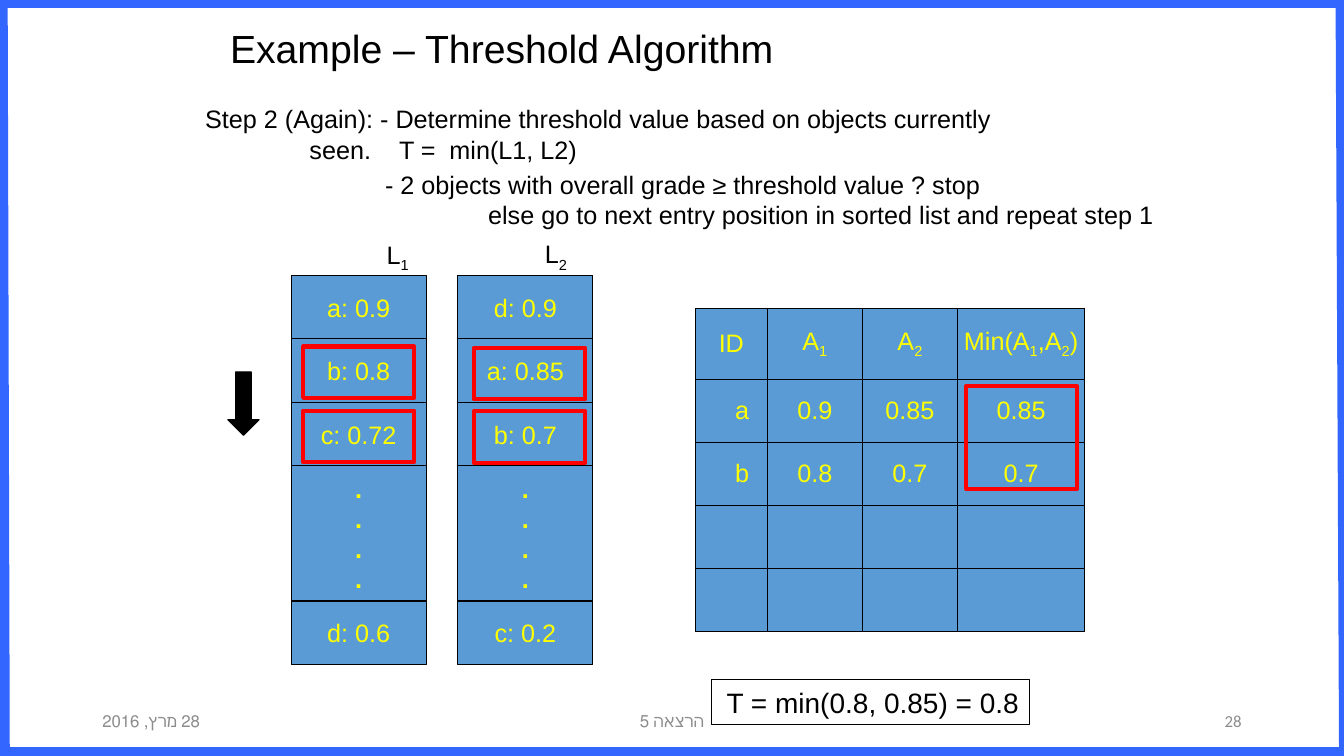
from lxml import etree
from pptx import Presentation
from pptx.dml.color import RGBColor
from pptx.enum.shapes import MSO_CONNECTOR, MSO_SHAPE
from pptx.enum.text import MSO_ANCHOR, MSO_AUTO_SIZE, PP_ALIGN
from pptx.oxml import parse_xml
from pptx.oxml.ns import nsdecls, qn
from pptx.util import Pt

LEFT, CENTER, RIGHT = PP_ALIGN.LEFT, PP_ALIGN.CENTER, PP_ALIGN.RIGHT
TOP, MIDDLE = MSO_ANCHOR.TOP, MSO_ANCHOR.MIDDLE
RECTANGLE, DOWN_ARROW = MSO_SHAPE.RECTANGLE, MSO_SHAPE.DOWN_ARROW
STRAIGHT = MSO_CONNECTOR.STRAIGHT
NO_AUTOFIT = MSO_AUTO_SIZE.NONE

BLACK = RGBColor(0x00, 0x00, 0x00)
YELLOW = RGBColor(0xFF, 0xFF, 0x00)
RED = RGBColor(0xFF, 0x00, 0x00)
CELL_BLUE = RGBColor(0x5B, 0x9B, 0xD5)
FRAME_BLUE = RGBColor(0x33, 0x66, 0xFF)
GREY = RGBColor(0x8C, 0x8C, 0x8C)


def write(frame, text, size=18, color=BLACK, align=LEFT, anchor=TOP,
          font="Arial", bold=False, wrap=True, rtl=False):
    """Fill a text frame; the character after an underscore is a subscript."""
    frame.word_wrap = wrap
    frame.vertical_anchor = anchor
    for row, line in enumerate(text.split("\n")):
        para = frame.paragraphs[0] if row == 0 else frame.add_paragraph()
        para.alignment = align
        if rtl:
            para._p.get_or_add_pPr().set("rtl", "1")
        head, *tails = line.split("_")
        pieces = [(head, False)]
        for tail in tails:
            pieces += [(tail[0], True), (tail[1:], False)]
        for piece, is_subscript in pieces:
            if not piece:
                continue
            span = para.add_run()
            span.text = piece
            span.font.size = Pt(size)
            span.font.name = font
            span.font.bold = bold
            span.font.color.rgb = color
            if is_subscript:
                span._r.get_or_add_rPr().set("baseline", "-25000")


def add_box(page, left, top, width, height, kind=RECTANGLE, fill=None,
            line=BLACK, weight=0.75):
    box = page.shapes.add_shape(kind, Pt(left), Pt(top), Pt(width), Pt(height))
    box.shadow.inherit = False
    if fill is None:
        box.fill.background()
    else:
        box.fill.solid()
        box.fill.fore_color.rgb = fill
    box.line.color.rgb = line
    box.line.width = Pt(weight)
    return box


deck = Presentation()
deck.slide_width, deck.slide_height = Pt(960), Pt(540)
page = deck.slides.add_slide(deck.slide_layouts[5])

# Frame around the page
for x1, y1, x2, y2 in [(960, 2, 0, 2), (957.5, 0, 960, 540),
                       (2, 0, 3.5, 540), (958, 537, 2, 537)]:
    edge = page.shapes.add_connector(STRAIGHT, Pt(x1), Pt(y1), Pt(x2), Pt(y2))
    edge.line.color.rgb = FRAME_BLUE
    edge.line.width = Pt(7)
    etree.SubElement(edge._element.spPr, qn("a:effectLst"))

# Title
title = page.shapes.title
title.left, title.top, title.width, title.height = Pt(139.5), Pt(14), Pt(420), Pt(41)
title.text_frame.auto_size = NO_AUTOFIT
write(title.text_frame, "Example – Threshold Algorithm", size=28, align=RIGHT, anchor=MIDDLE)

# Sorted lists
LIST_WIDTH, ENTRY_HEIGHT, DOTS_HEIGHT = 96.5, 45.4, 96.5
sorted_lists = [
    (208, ["a: 0.9", "b: 0.8", "c: 0.72", ".\n.\n.\n.", "d: 0.6"]),
    (327, ["d: 0.9", "a: 0.85", "b: 0.7", ".\n.\n.\n.", "c: 0.2"]),
]
for list_left, entries in sorted_lists:
    top = 196.6
    for entry in entries:
        is_dots = entry.startswith(".")
        height = DOTS_HEIGHT if is_dots else ENTRY_HEIGHT
        box = add_box(page, list_left, top, LIST_WIDTH, height, fill=CELL_BLUE)
        write(box.text_frame, entry, color=YELLOW, align=CENTER, anchor=MIDDLE,
              bold=is_dots, wrap=False)
        top += height

# Table of overall grades
grades = [
    ["ID", "A_1", "A_2", "Min(A_1,A_2)"],
    ["a", "0.9", "0.85", "0.85"],
    ["b", "0.8", "0.7", "0.7"],
    [""] * 4,
    [""] * 4,
]
column_widths = [51.2, 68, 68, 90.8]
row_heights = [50.8, 45.1, 45.1, 45.1, 45.1]
table = page.shapes.add_table(5, 4, Pt(496.8), Pt(220), Pt(sum(column_widths)),
                              Pt(sum(row_heights))).table
table.first_row = table.horz_banding = False
for column, width in zip(table.columns, column_widths):
    column.width = Pt(width)
for row, height in zip(table.rows, row_heights):
    row.height = Pt(height)
for r, values in enumerate(grades):
    for c, value in enumerate(values):
        cell = table.cell(r, c)
        for side in ("lnL", "lnR", "lnT", "lnB"):
            cell._tc.get_or_add_tcPr().append(parse_xml(
                f'<a:{side} {nsdecls("a")} w="9525"><a:solidFill>'
                f'<a:srgbClr val="{BLACK}"/></a:solidFill></a:{side}>'))
        cell.fill.solid()
        cell.fill.fore_color.rgb = CELL_BLUE
        is_object = c == 0 and r > 0
        cell.margin_left = 0
        cell.margin_right = Pt(13 if is_object else 0)
        cell.vertical_anchor = MIDDLE
        write(cell.text_frame, value, color=YELLOW, anchor=MIDDLE,
              align=RIGHT if is_object else CENTER)

# Highlighted entries and grades
for left, top, height in [(216.5, 247.5, 36.7), (338.4, 248.5, 36.7), (338.4, 293.8, 36.7),
                          (216.5, 293.3, 36.7), (690, 275.8, 73.4)]:
    add_box(page, left, top, 79.5, height, line=RED, weight=3)

add_box(page, 162.7, 265.6, 22.4, 45.4, kind=DOWN_ARROW, fill=BLACK)

threshold = add_box(page, 508.3, 485.5, 226.8, 32)
write(threshold.text_frame, "T = min(0.8, 0.85) = 0.8", size=20, align=RIGHT, anchor=MIDDLE)

# Step text, list labels and footers
footer = {"size": 12, "color": GREY, "font": "Calibri", "anchor": MIDDLE}
labels = [
    (139.5, 70.5, 629, 50.5,
     "Step 2 (Again): - Determine threshold value based on objects currently\n"
     "\tseen.\tT =\tmin(L1, L2)", {}),
    (268, 117.5, 563, 50.5,
     "- 2 objects with overall grade ≥ threshold value ? stop\n"
     "else go to next entry position in sorted list and repeat step 1", {}),
    (242, 167.5, 57, 29, "L_1", {"align": RIGHT}),
    (355, 167, 57, 29, "L_2", {"align": RIGHT}),
    (66, 500.5, 216, 29, "28 מרץ, 2016", {"rtl": True, **footer}),
    (318, 500.5, 324, 29, "הרצאה 5", {"rtl": True, "align": CENTER, **footer}),
    (678, 500.5, 216, 29, "28", {"align": RIGHT, **footer}),
]
label_boxes = []
for left, top, width, height, text, look in labels:
    box = page.shapes.add_textbox(Pt(left), Pt(top), Pt(width), Pt(height))
    write(box.text_frame, text, **look)
    label_boxes.append(box)

step, stop_rule = label_boxes[:2]
stop_rule.text_frame.paragraphs[1].alignment = RIGHT
tab_list = etree.SubElement(step.text_frame.paragraphs[1]._p.get_or_add_pPr(), qn("a:tabLst"))
for position in (74.5, 138.5, 174.5):
    etree.SubElement(tab_list, qn("a:tab"), pos=str(Pt(position)), algn="l")

deck.save("out.pptx")
